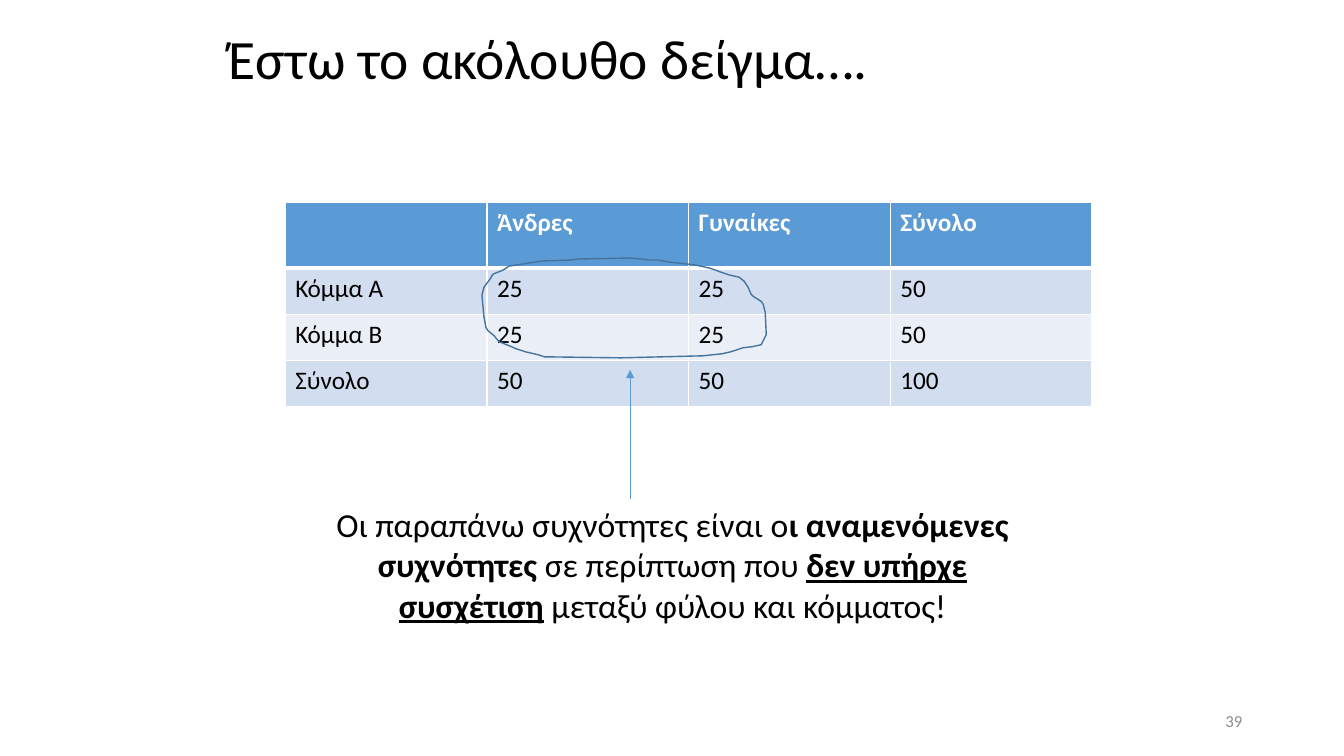
from lxml import etree
from pptx import Presentation
from pptx.dml.color import RGBColor
from pptx.enum import shapes, text
from pptx.oxml import ns
from pptx.util import Inches, Pt


def color(value):
    return RGBColor.from_string(value)


def write(para, content, size, tint="000000", **styles):
    span = para.add_run()
    span.text = content
    span.font.color.rgb = color(tint)
    for name, value in {"name": "Calibri", "size": Pt(size), **styles}.items():
        setattr(span.font, name, value)


deck = Presentation()
deck.slide_width, deck.slide_height = Inches(13.33), Inches(7.5)
page = deck.slides.add_slide(deck.slide_layouts[5])

title = page.shapes.title
title.left, title.top, title.width, title.height = [Inches(n) for n in (2.17, 0.3, 9, 0.62)]
title.text_frame.auto_size = text.MSO_AUTO_SIZE.NONE
title.text_frame.vertical_anchor = text.MSO_ANCHOR.MIDDLE
heading = title.text_frame.paragraphs[0]
heading.alignment = text.PP_ALIGN.LEFT
heading.line_spacing = 0.9
write(heading, "Έστω το ακόλουθο δείγμα….", 39.6)

number = page.shapes.add_textbox(Inches(9.42), Inches(6.95), Inches(3), Inches(0.4))
number.text_frame.word_wrap = True
number.text_frame.vertical_anchor = text.MSO_ANCHOR.MIDDLE
number.text_frame.paragraphs[0].alignment = text.PP_ALIGN.RIGHT
write(number.text_frame.paragraphs[0], "39", 12, "8C8C8C")

sample = [
    ["", "Άνδρες", "Γυναίκες", "Σύνολο"],
    ["Κόμμα Α", "25", "25", "50"],
    ["Κόμμα Β", "25", "25", "50"],
    ["Σύνολο", "50", "50", "100"],
]
fills = ["5B9BD5", "D2DEEF", "EAEFF7", "D2DEEF"]
table = page.shapes.add_table(4, 4, Inches(2.83), Inches(2.01), Inches(8), Inches(2.02)).table
for r, values in enumerate(sample):
    table.rows[r].height = Inches(0.65 if r == 0 else (2.02 - 0.65) / 3)
    for c, value in enumerate(values):
        cell = table.cell(r, c)
        properties = cell._tc.get_or_add_tcPr()
        for side in "LRTB":
            thick = (r == 0 and side == "B") or (r == 1 and side == "T")
            border = etree.SubElement(properties, ns.qn(f"a:ln{side}"), w=str(Pt(3 if thick else 1)))
            paint = etree.SubElement(border, ns.qn("a:solidFill"))
            etree.SubElement(paint, ns.qn("a:srgbClr"), val="FFFFFF")
        cell.fill.solid()
        cell.fill.fore_color.rgb = color(fills[r])
        if value:
            write(cell.text_frame.paragraphs[0], value, 18, "FFFFFF" if r == 0 else "000000", bold=r == 0)

note = page.shapes.add_textbox(Inches(2.96), Inches(4.95), Inches(7.42), Inches(1.31))
note.text_frame.word_wrap = True
note.text_frame.auto_size = text.MSO_AUTO_SIZE.SHAPE_TO_FIT_TEXT
message = note.text_frame.paragraphs[0]
message.alignment = text.PP_ALIGN.CENTER
for content, bold, underline in [
    ("Οι παραπάνω συχνότητες είναι ο", False, False),
    ("ι αναμενόμενες συχνότητες", True, False),
    (" σε περίπτωση που ", False, False),
    ("δεν υπήρχε συσχέτιση", True, True),
    (" μεταξύ φύλου και κόμματος!", False, False),
]:
    write(message, content, 24, bold=bold, underline=underline)

loop_points = [
    (7.42, 2.85), (7.38, 2.79), (7.33, 2.75), (7.24, 2.73), (7.15, 2.7), (7.04, 2.66),
    (6.9, 2.63), (6.82, 2.62), (6.63, 2.6), (6.53, 2.58), (6.44, 2.58), (6.36, 2.57),
    (6.24, 2.56), (5.74, 2.57), (5.66, 2.58), (5.37, 2.59), (5.18, 2.62), (5.05, 2.64),
    (4.99, 2.68), (4.89, 2.72), (4.86, 2.77), (4.8, 2.85), (4.78, 2.93), (4.8, 3.14),
    (4.82, 3.25), (4.84, 3.28), (4.9, 3.33), (4.95, 3.39), (5.05, 3.43), (5.12, 3.46),
    (5.21, 3.49), (5.34, 3.52), (5.4, 3.54), (6.16, 3.55), (6.97, 3.53), (7.16, 3.51),
    (7.25, 3.49), (7.37, 3.45), (7.46, 3.44), (7.55, 3.42), (7.58, 3.36), (7.6, 3.32),
    (7.59, 3.1), (7.57, 3.02), (7.55, 2.99), (7.47, 2.94), (7.45, 2.92),
]
outline = [(Inches(x), Inches(y)) for x, y in loop_points]
builder = page.shapes.build_freeform(*outline[0])
builder.add_line_segments(outline[1:], close=True)
loop = builder.convert_to_shape()
loop.shadow.inherit = False
loop.fill.background()
loop.line.color.rgb = color("43739E")
loop.line.width = Pt(1)

arrow = page.shapes.add_connector(
    shapes.MSO_CONNECTOR.STRAIGHT, Inches(6.25), Inches(4.95), Inches(6.25), Inches(3.67)
)
arrow.line.color.rgb = color("5B9BD5")
arrow.line.width = Pt(0.5)
etree.SubElement(arrow.line._get_or_add_ln(), ns.qn("a:tailEnd"), type="triangle")
etree.SubElement(arrow._element.spPr, ns.qn("a:effectLst"))

deck.save("out.pptx")
